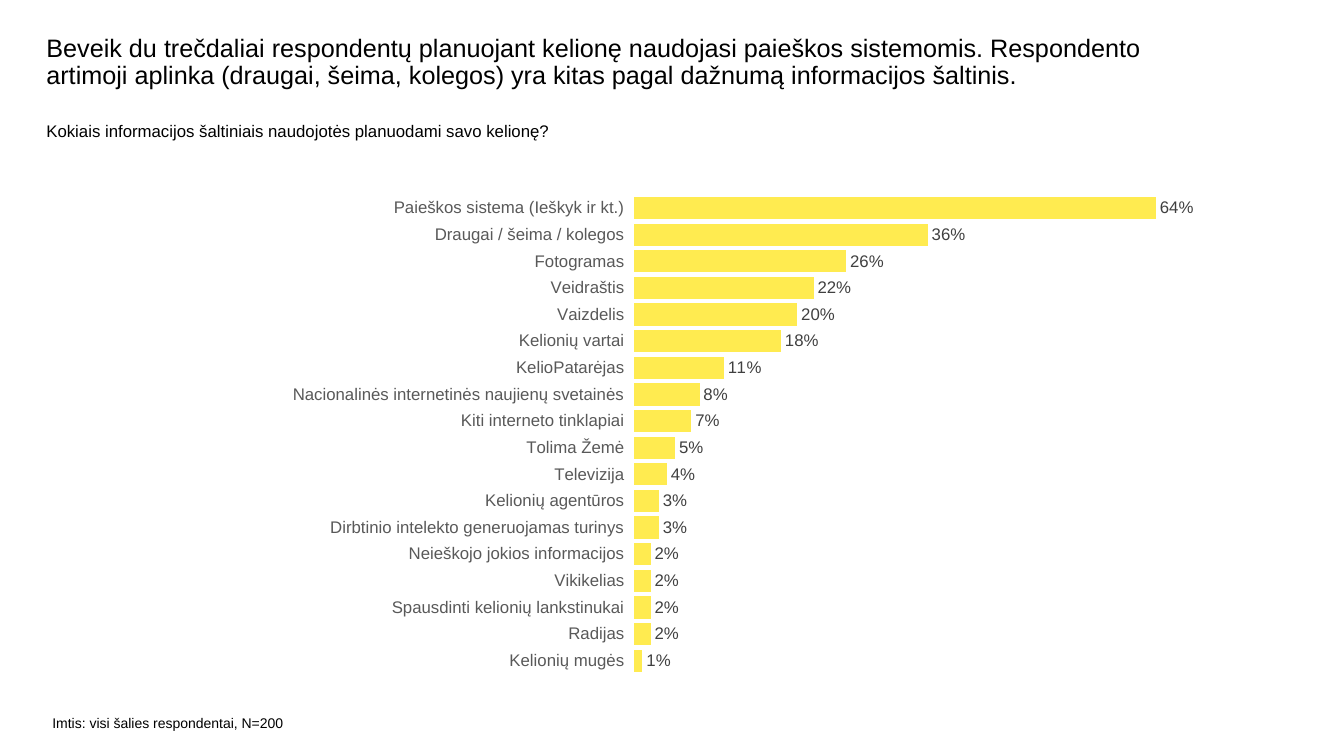
from dataclasses import dataclass

from lxml.etree import SubElement as add_element
from pptx import Presentation
from pptx.chart.data import CategoryChartData as ChartData
from pptx.dml.color import RGBColor as Color
from pptx.enum.chart import XL_CHART_TYPE as ChartType
from pptx.enum.chart import XL_LABEL_POSITION as LabelPosition
from pptx.enum.chart import XL_TICK_LABEL_POSITION as TickLabels
from pptx.enum.chart import XL_TICK_MARK as TickMark
from pptx.enum.text import MSO_ANCHOR as Anchor
from pptx.enum.text import MSO_AUTO_SIZE as AutoSize
from pptx.enum.text import PP_ALIGN as Align
from pptx.oxml.ns import qn
from pptx.util import Inches, Pt


@dataclass(frozen=True)
class Theme:
    font: str = "Arial"
    ink: str = "000000"
    axis: str = "595959"
    label: str = "404040"
    bar: str = "FFEB50"
    title: int = 18
    body: int = 12
    note: int = 10


THEME = Theme()
WIDTH, HEIGHT = Inches(13.33), Inches(7.5)

HEADLINE = (
    "Beveik du trečdaliai respondentų planuojant kelionę naudojasi paieškos "
    "sistemomis. Respondento artimoji aplinka (draugai, šeima, kolegos) yra "
    "kitas pagal dažnumą informacijos šaltinis."
)
QUESTION = "Kokiais informacijos šaltiniais naudojotės planuodami savo kelionę?"
SAMPLE = "Imtis: visi šalies respondentai, N=200"
SOURCES = [
    ("Paieškos sistema (Ieškyk ir kt.)", 0.64),
    ("Draugai / šeima / kolegos", 0.36),
    ("Fotogramas", 0.26),
    ("Veidraštis", 0.22),
    ("Vaizdelis", 0.20),
    ("Kelionių vartai", 0.18),
    ("KelioPatarėjas", 0.11),
    ("Nacionalinės internetinės naujienų svetainės", 0.08),
    ("Kiti interneto tinklapiai", 0.07),
    ("Tolima Žemė", 0.05),
    ("Televizija", 0.04),
    ("Kelionių agentūros", 0.03),
    ("Dirbtinio intelekto generuojamas turinys", 0.03),
    ("Neieškojo jokios informacijos", 0.02),
    ("Vikikelias", 0.02),
    ("Spausdinti kelionių lankstinukai", 0.02),
    ("Radijas", 0.02),
    ("Kelionių mugės", 0.01),
]


def apply(target, **values):
    for name, value in values.items():
        setattr(target, name, value)


def style_font(font, size, color):
    apply(font, name=THEME.font, size=Pt(size), bold=False)
    font.color.rgb = Color.from_string(color)


def share(left, top, width, height):
    return dict(
        left=int(WIDTH * left / 100),
        top=int(HEIGHT * top / 100),
        width=int(WIDTH * width / 100),
        height=int(HEIGHT * height / 100),
    )


def write_text(shape, box, text, size, line_spacing=1.0):
    apply(shape, **box)
    frame = shape.text_frame
    apply(
        frame, word_wrap=True, auto_size=AutoSize.NONE, vertical_anchor=Anchor.TOP,
        margin_left=0, margin_top=0, margin_right=0, margin_bottom=0,
    )
    para = frame.paragraphs[0]
    apply(para, alignment=Align.LEFT, line_spacing=line_spacing)
    span = para.add_run()
    span.text = text
    style_font(span.font, size, THEME.ink)


def add_heading(page, title_box, question_box):
    write_text(page.shapes.title, title_box, HEADLINE, THEME.title, 0.9)
    add_caption(page, question_box, QUESTION, THEME.body)


def add_caption(page, box, text, size):
    write_text(page.shapes.add_textbox(**box), box, text, size)


def place_plot(chart, **extent):
    plot_area = chart._chartSpace.chart.plotArea
    layout = plot_area.find(qn("c:layout"))
    if layout is None:
        layout = add_element(plot_area, qn("c:layout"))
        plot_area.insert(0, layout)
    manual = add_element(layout, qn("c:manualLayout"))
    settings = dict(layoutTarget="inner", xMode="edge", yMode="edge", **extent)
    for name, value in settings.items():
        add_element(manual, qn(f"c:{name}"), val=str(value))


def add_source_chart(page, box):
    data = ChartData(number_format="0%")
    names, values = zip(*reversed(SOURCES))
    data.categories = names
    data.add_series("Series 1", values)
    frame = page.shapes.add_chart(
        ChartType.BAR_CLUSTERED, box["left"], box["top"],
        box["width"], box["height"], data,
    )
    chart = frame.chart
    apply(chart, has_legend=False, has_title=False)
    style_font(chart.font, THEME.note, THEME.ink)
    place_plot(chart, x=0.4, y=0.03, w=0.54, h=0.94)

    category_axis = chart.category_axis
    apply(
        category_axis, major_tick_mark=TickMark.NONE,
        minor_tick_mark=TickMark.NONE, tick_label_position=TickLabels.LOW,
        has_major_gridlines=False,
    )
    category_axis.format.line.fill.background()
    style_font(category_axis.tick_labels.font, THEME.body, THEME.axis)
    apply(
        chart.value_axis, visible=False, has_major_gridlines=False,
        minimum_scale=0, maximum_scale=0.7,
    )

    plot = chart.plots[0]
    apply(plot, gap_width=20, vary_by_categories=False, has_data_labels=True)
    labels = plot.data_labels
    apply(
        labels, show_value=True, number_format="0%",
        number_format_is_linked=False, position=LabelPosition.OUTSIDE_END,
    )
    style_font(labels.font, THEME.body, THEME.label)
    fill = plot.series[0].format.fill
    fill.solid()
    fill.fore_color.rgb = Color.from_string(THEME.bar)


def build_survey_page(deck):
    page = deck.slides.add_slide(deck.slide_layouts[5])
    add_heading(page, share(3.45, 4.67, 84.4, 8), share(3.45, 16, 89.2, 8.13))
    add_source_chart(page, share(15.75, 23.73, 78.62, 67.47))
    add_caption(page, share(3.9, 94.53, 18.98, 3.2), SAMPLE, THEME.note)


def main():
    deck = Presentation()
    apply(deck, slide_width=WIDTH, slide_height=HEIGHT)
    build_survey_page(deck)
    deck.save("out.pptx")


if __name__ == "__main__":
    main()
